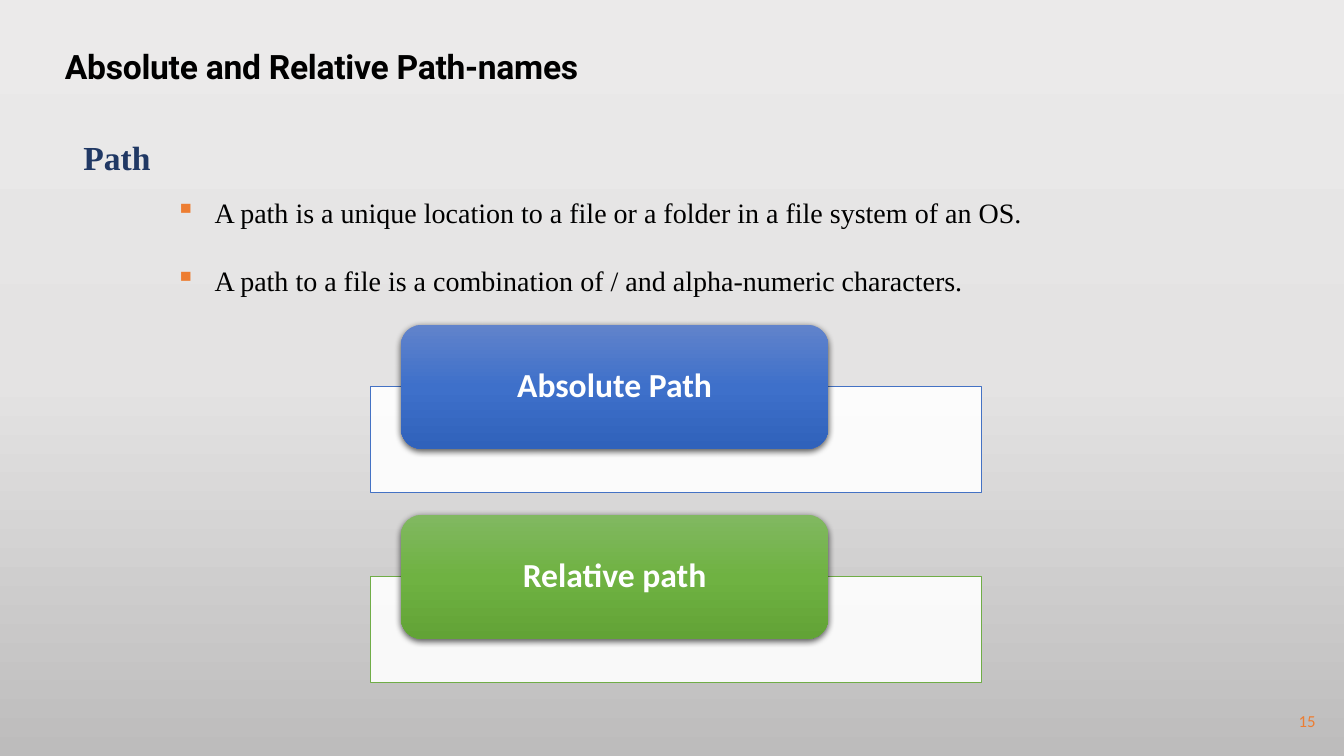
"""Build the slide on absolute and relative path-names."""
from dataclasses import dataclass

from lxml import etree
from pptx import Presentation
from pptx.dml.color import RGBColor
from pptx.enum.shapes import MSO_SHAPE
from pptx.enum.text import MSO_ANCHOR, PP_ALIGN
from pptx.oxml.ns import qn
from pptx.util import Pt

RECTANGLE = MSO_SHAPE.RECTANGLE
ROUNDED = MSO_SHAPE.ROUNDED_RECTANGLE
MIDDLE, TOP = MSO_ANCHOR.MIDDLE, MSO_ANCHOR.TOP
LEFT, CENTER, RIGHT, JUSTIFY = PP_ALIGN.LEFT, PP_ALIGN.CENTER, PP_ALIGN.RIGHT, PP_ALIGN.JUSTIFY

COLORS = {
    "black": "000000",
    "white": "FFFFFF",
    "navy": "203864",
    "orange": "ED7D31",
    "blue": "4472C4",
    "green": "70AD47",
}
GRADIENTS = {
    "background": ("EBEAEA", "E4E3E3", "BDBCBC"),
    "blue": ("6183CB", "3E70CA", "3062BB"),
    "green": ("81B861", "6FB242", "62A336"),
}


@dataclass
class PathKind:
    label: str
    color: str


@dataclass
class Style:
    font: str
    size: float
    color: str
    bold: bool = False
    align: PP_ALIGN = LEFT


PATH_KINDS = [PathKind("Absolute Path", "blue"), PathKind("Relative path", "green")]
PATH_FACTS = [
    ("A path is a unique location to a file or a folder in a file system of an OS.", 13),
    ("A path to a file is a combination of / and alpha-numeric characters.", 24.8),
]
TITLE = Style("Roboto", 24, "black", True)
HEADING = Style("Times New Roman", 24, "navy", True, JUSTIFY)
FACT = Style("Times New Roman", 20, "black", False, JUSTIFY)
LABEL = Style("Calibri", 24, "white", True, CENTER)
NUMBER = Style("Calibri", 12, "orange", False, RIGHT)
PITCH = 135.7


def add_child(parent, tag: str, **attributes: str):
    return etree.SubElement(parent, qn(tag), attributes)


def set_gradient(fill, owner, colors: tuple) -> None:
    fill.gradient()
    fill.gradient_angle = 270
    stops = next(owner.iter(qn("a:gsLst")))
    for stop in list(stops):
        stops.remove(stop)
    for index, color in enumerate(colors):
        stop = add_child(stops, "a:gs", pos=str(index * 50000))
        add_child(stop, "a:srgbClr", val=color)


def write(paragraph, text: str, style: Style) -> None:
    paragraph.text = text
    paragraph.alignment = style.align
    font = paragraph.font
    font.name, font.size, font.bold = style.font, Pt(style.size), style.bold
    font.color.rgb = RGBColor.from_string(COLORS[style.color])


def indent(paragraph, margin: float, first: float = 0) -> None:
    properties = paragraph._p.get_or_add_pPr()
    properties.set("marL", str(Pt(margin)))
    properties.set("indent", str(Pt(first)))


def add_bullet(paragraph, color: str) -> None:
    properties = paragraph._p.get_or_add_pPr()
    bullet_color = etree.Element(qn("a:buClr"))
    add_child(bullet_color, "a:srgbClr", val=COLORS[color])
    bullet = etree.Element(qn("a:buChar"), char="▪")
    defaults = properties.find(qn("a:defRPr"))
    defaults.addprevious(bullet_color)
    defaults.addprevious(bullet)


def add_text(slide, box: tuple, text: str, style: Style, anchor: MSO_ANCHOR = TOP):
    frame = slide.shapes.add_textbox(*map(Pt, box)).text_frame
    frame.word_wrap = True
    frame.vertical_anchor = anchor
    write(frame.paragraphs[0], text, style)
    return frame


def add_path_kind(slide, kind: PathKind, top: float) -> None:
    panel = slide.shapes.add_shape(RECTANGLE, Pt(264.4), Pt(top + 44.3), Pt(436.4), Pt(75.6))
    panel.shadow.inherit = False
    panel.fill.solid()
    panel.fill.fore_color.rgb = RGBColor.from_string(COLORS["white"])
    add_child(next(panel._element.spPr.iter(qn("a:srgbClr"))), "a:alpha", val="90000")
    panel.line.color.rgb = RGBColor.from_string(COLORS[kind.color])
    panel.line.width = Pt(0.5)

    tab = slide.shapes.add_shape(ROUNDED, Pt(286.4), Pt(top), Pt(305.3), Pt(88.6))
    tab.line.fill.background()
    set_gradient(tab.fill, tab._element, GRADIENTS[kind.color])
    tab.shadow.inherit = False
    shadow = add_child(tab._element.spPr.find(qn("a:effectLst")), "a:outerShdw",
                       blurRad=str(Pt(4.5)), dist=str(Pt(1.5)), dir="5400000", rotWithShape="0")
    shade = add_child(shadow, "a:srgbClr", val=COLORS["black"])
    add_child(shade, "a:alpha", val="63000")

    frame = tab.text_frame
    frame.word_wrap = True
    frame.vertical_anchor = MIDDLE
    frame.margin_left = frame.margin_right = Pt(11.5)
    frame.margin_top = frame.margin_bottom = Pt(0)
    write(frame.paragraphs[0], kind.label, LABEL)
    frame.paragraphs[0].line_spacing = 0.9


def main() -> None:
    presentation = Presentation()
    presentation.slide_width, presentation.slide_height = Pt(960), Pt(540)
    slide = presentation.slides.add_slide(presentation.slide_layouts[6])
    set_gradient(slide.background.fill, slide._element, GRADIENTS["background"])

    add_text(slide, (913, 500.4, 33.8, 28.8), "15", NUMBER, MIDDLE)

    body = add_text(slide, (24.5, 94.3, 859.7, 121), "Path", HEADING, MIDDLE)
    indent(body.paragraphs[0], 28)
    for fact, gap in PATH_FACTS:
        paragraph = body.add_paragraph()
        write(paragraph, fact, FACT)
        indent(paragraph, 121.7, -28)
        paragraph.space_before = Pt(gap)
        add_bullet(paragraph, "orange")

    title = add_text(slide, (38.2, 29.5, 807.1, 36), "Absolute and Relative Path-names", TITLE)
    indent(title.paragraphs[0], 1)
    title.paragraphs[0].runs[0]._r.get_or_add_rPr().set("spc", "-20")

    for index, kind in enumerate(PATH_KINDS):
        add_path_kind(slide, kind, 232 + index * PITCH)

    presentation.save("out.pptx")


if __name__ == "__main__":
    main()
